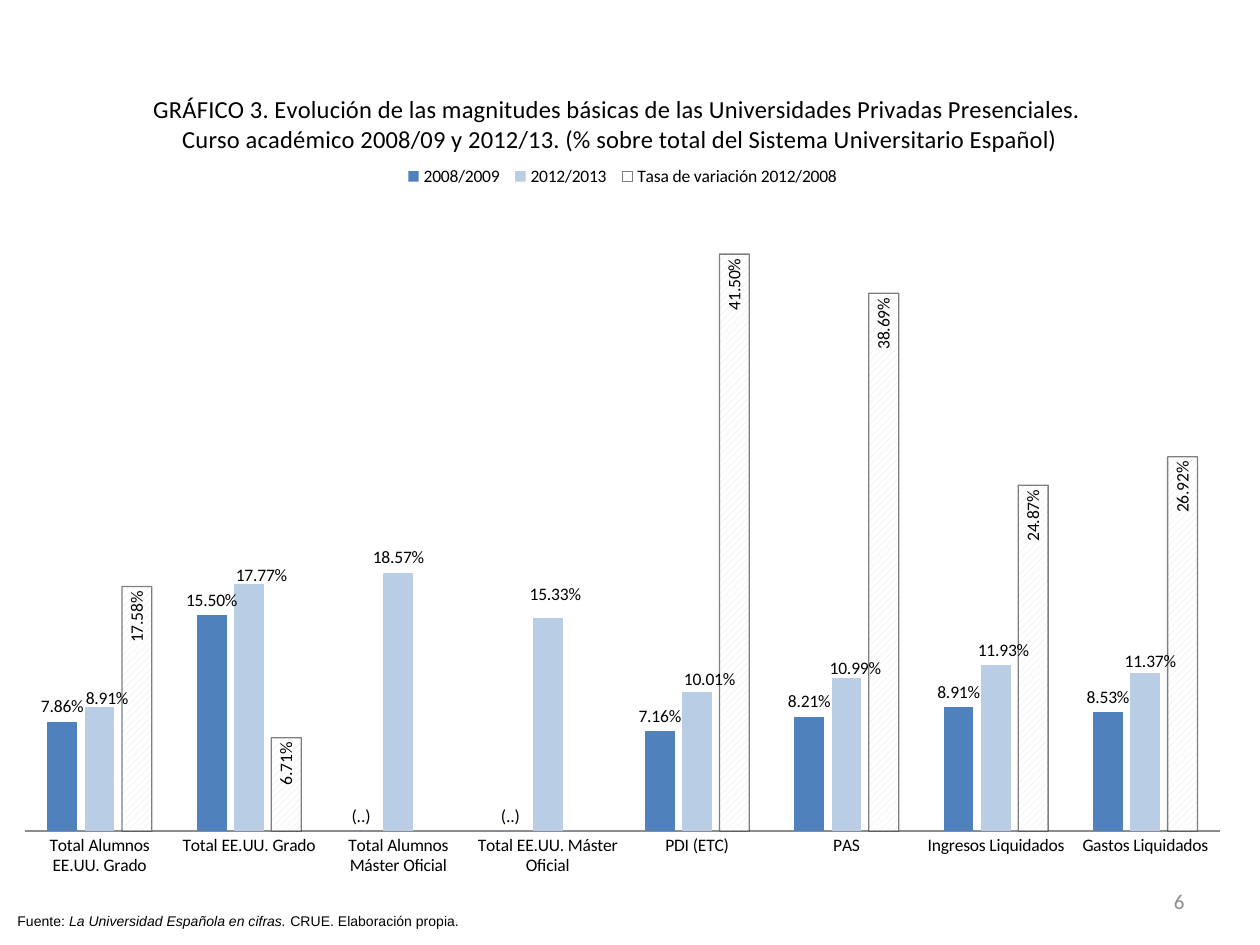
from dataclasses import dataclass

from pptx import Presentation
from pptx.chart.data import CategoryChartData
from pptx.dml.color import RGBColor
from pptx.enum.chart import XL_CHART_TYPE, XL_LABEL_POSITION, XL_LEGEND_POSITION, XL_TICK_MARK
from pptx.enum.dml import MSO_PATTERN
from pptx.enum.text import MSO_ANCHOR, PP_ALIGN
from pptx.oxml import parse_xml
from pptx.oxml.ns import nsdecls, qn
from pptx.util import Pt


@dataclass(frozen=True)
class Theme:
    black: RGBColor = RGBColor(0, 0, 0)
    gray: RGBColor = RGBColor(0x8C, 0x8C, 0x8C)
    blue: RGBColor = RGBColor(0x4F, 0x81, 0xBD)
    light_blue: RGBColor = RGBColor(0xB9, 0xCD, 0xE5)
    hatch: RGBColor = RGBColor(0xDC, 0xE6, 0xF2)
    white: RGBColor = RGBColor(255, 255, 255)
    chart_font: str = "Calibri"
    source_font: str = "Arial"
    title_size: Pt = Pt(14)
    number_size: Pt = Pt(12)
    chart_size: Pt = Pt(10)
    source_size: Pt = Pt(8)


THEME = Theme()
PERCENT = "0.00%"
CATEGORIES = [
    "Total Alumnos EE.UU. Grado", "Total EE.UU. Grado",
    "Total Alumnos Máster Oficial", "Total EE.UU. Máster Oficial",
    "PDI (ETC)", "PAS", "Ingresos Liquidados", "Gastos Liquidados",
]
SERIES = {
    "2008/2009": [0.0786, 0.155, 0, 0, 0.0716, 0.0821, 0.0891, 0.0853],
    "2012/2013": [0.0891, 0.1777, 0.1857, 0.1533, 0.1001, 0.1099, 0.1193, 0.1137],
    "Tasa de variación 2012/2008": [0.1758, 0.0671, None, None, 0.415, 0.3869, 0.2487, 0.2692],
}
TITLE = [
    "GRÁFICO 3. Evolución de las magnitudes básicas de las Universidades Privadas Presenciales. ",
    "Curso académico 2008/09 y 2012/13. (% sobre total del Sistema Universitario Español)",
]
LABEL_SHIFTS = {
    0: (0.006, 0.008), 1: (0.01, 0.008), 3: (0.006, -0.01), 4: (0.01, 0.003),
    5: (0.007, 0.006), 6: (0.006, 0), 7: (0.004, 0.004),
}


def set_font(font, name, size, color):
    font.name, font.size, font.bold = name, size, False
    font.color.rgb = color


def set_layout(element, after=None, modes="", **values):
    for old in element.findall(qn("c:layout")):
        element.remove(old)
    sizes = "".join(f'<c:{key} val="{value}"/>' for key, value in values.items())
    layout = parse_xml(f'<c:layout {nsdecls("c")}><c:manualLayout>{modes}{sizes}</c:manualLayout></c:layout>')
    if after:
        element.find(qn(after)).addnext(layout)
    else:
        element.insert(0, layout)


def add_labels(series, position):
    labels = series.data_labels
    labels.show_value = True
    labels.number_format, labels.number_format_is_linked = PERCENT, False
    labels.position = position
    set_font(labels.font, THEME.chart_font, THEME.chart_size, THEME.black)


def style_series(chart):
    before, after, rate = chart.plots[0].series
    for series, color in ((before, THEME.blue), (after, THEME.light_blue)):
        series.format.fill.solid()
        series.format.fill.fore_color.rgb = color
        add_labels(series, XL_LABEL_POSITION.OUTSIDE_END)

    fill = rate.format.fill
    fill.patterned()
    fill.pattern = MSO_PATTERN.WIDE_UPWARD_DIAGONAL
    fill.fore_color.rgb, fill.back_color.rgb = THEME.hatch, THEME.white
    rate.format.line.color.rgb = THEME.black
    rate.format.line.width = Pt(0.75)
    add_labels(rate, XL_LABEL_POSITION.INSIDE_END)
    line_color = chart.element.xpath("//c:ser[3]/c:spPr/a:ln//a:srgbClr")[0]
    line_color.append(parse_xml(f'<a:alpha {nsdecls("a")} val="50000"/>'))
    body = chart.element.xpath("//c:ser[3]/c:dLbls/c:txPr/a:bodyPr")[0]
    body.set("rot", "-5400000")
    body.set("vert", "horz")

    for index in (2, 3):
        label = before.points[index].data_label
        label.text_frame.text = "(..)"
        set_font(label.text_frame.paragraphs[0].runs[0].font,
                 THEME.chart_font, THEME.chart_size, THEME.black)
        label.position = XL_LABEL_POSITION.OUTSIDE_END
    for index, (x, y) in LABEL_SHIFTS.items():
        after.points[index].data_label.position = XL_LABEL_POSITION.OUTSIDE_END
        label = chart.element.xpath(f"//c:ser[2]/c:dLbls/c:dLbl[c:idx/@val='{index}']")[0]
        set_layout(label, "c:idx", x=x, y=y)


def style_axes(chart):
    value_axis, category_axis = chart.value_axis, chart.category_axis
    value_axis.minimum_scale, value_axis.maximum_scale = 0, 0.45
    value_axis.has_major_gridlines = False
    value_axis.visible = False
    category_axis.major_tick_mark = XL_TICK_MARK.NONE
    category_axis.format.line.color.rgb = THEME.gray


def add_chart(slide):
    data = CategoryChartData(number_format=PERCENT)
    data.categories = CATEGORIES
    for name, values in SERIES.items():
        data.add_series(name, values)
    chart = slide.shapes.add_chart(
        XL_CHART_TYPE.COLUMN_CLUSTERED, Pt(0), Pt(31.7), Pt(711.4), Pt(476.6), data).chart
    set_font(chart.font, THEME.chart_font, THEME.chart_size, THEME.black)
    plot = chart.plots[0]
    plot.gap_width, plot.overlap, plot.vary_by_categories = 150, -25, False

    title_frame = chart.chart_title.text_frame
    title_frame.text = "\n".join(TITLE)
    for paragraph in title_frame.paragraphs:
        set_font(paragraph.runs[0].font, THEME.chart_font, THEME.title_size, THEME.black)
    chart.has_legend = True
    chart.legend.position = XL_LEGEND_POSITION.TOP
    chart.legend.include_in_layout = False

    style_series(chart)
    style_axes(chart)
    edge = '<c:xMode val="edge"/><c:yMode val="edge"/>'
    root = chart.element
    set_layout(root.xpath("//c:chart/c:title")[0], "c:tx", edge, x=0.12, y=0.04)
    set_layout(root.xpath("//c:legend")[0], "c:legendPos", edge, x=0.32, y=0.13, w=0.36, h=0.03)
    set_layout(root.xpath("//c:plotArea")[0], None,
               '<c:layoutTarget val="inner"/>' + edge, x=0.02, y=0.18, w=0.96, h=0.75)


def add_text(slide, box, runs, font_name, size, color, align=PP_ALIGN.LEFT, anchor=MSO_ANCHOR.TOP):
    frame = slide.shapes.add_textbox(*map(Pt, box)).text_frame
    frame.word_wrap = True
    frame.vertical_anchor = anchor
    paragraph = frame.paragraphs[0]
    paragraph.alignment = align
    for text, italic in runs:
        run = paragraph.add_run()
        run.text = text
        set_font(run.font, font_name, size, color)
        run.font.italic = italic


def main():
    presentation = Presentation()
    presentation.slide_width, presentation.slide_height = Pt(720), Pt(540)
    slide = presentation.slides.add_slide(presentation.slide_layouts[6])
    add_chart(slide)
    add_text(slide, (2.9, 517.7, 561.6, 17.3),
             [("Fuente: ", False), ("La Universidad Española en cifras.", True),
              (" CRUE. Elaboración propia.", False)],
             THEME.source_font, THEME.source_size, THEME.black)
    add_text(slide, (516.2, 500.4, 167.8, 28.8), [("6", False)],
             THEME.chart_font, THEME.number_size, THEME.gray, PP_ALIGN.RIGHT, MSO_ANCHOR.MIDDLE)
    presentation.save("out.pptx")


if __name__ == "__main__":
    main()
